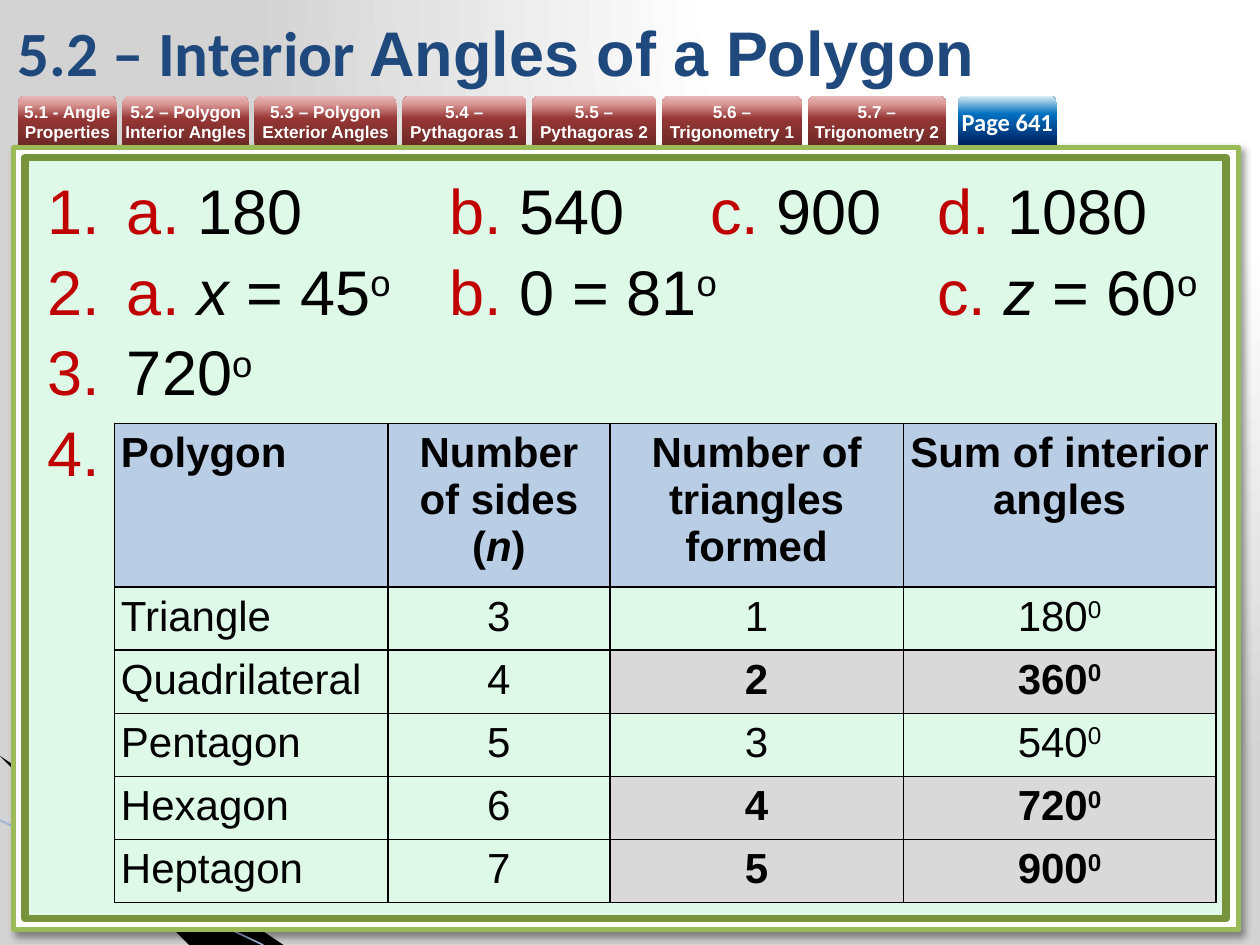
"""Build the answers slide on interior angles of a polygon."""
from lxml import etree
from pptx import Presentation
from pptx.dml.color import RGBColor
from pptx.enum.shapes import MSO_CONNECTOR, MSO_SHAPE
from pptx.enum.text import MSO_ANCHOR, PP_ALIGN
from pptx.oxml import parse_xml
from pptx.oxml.ns import nsdecls, qn
from pptx.util import Inches, Pt

RECT, TAB = MSO_SHAPE.RECTANGLE, MSO_SHAPE.ROUND_2_SAME_RECTANGLE
STRAIGHT = MSO_CONNECTOR.STRAIGHT
MIDDLE, CENTER, LEFT = MSO_ANCHOR.MIDDLE, PP_ALIGN.CENTER, PP_ALIGN.LEFT

COLORS = {
    "title": "1F497D", "text": "000000", "marker": "C00000", "white": "FFFFFF",
    "frame": "9BBB59", "panel": "DFF9E8", "panel_edge": "77933C",
    "header": "B9CDE5", "answer": "D9D9D9", "swoosh": "A7B9DB", "swoosh_line": "9EB3D6",
}
BACKDROP = [(0, "FFFFFF"), (40, "FFFFFF"), (100, "D3D3D3")]
RED = [(0, "6F2927"), (54, "953735"), (83, "D99694"), (100, "E6B9B8")]
BLUE = [(0, "002060"), (63, "0070C0"), (100, "DBEEF4")]

TITLE = [("5.2 – Interior ", "Calibri"), ("Angles of a Polygon", "Arial")]
SECTIONS = [
    ("5.1 - Angle Properties", 0.79), ("5.2 – Polygon Interior Angles", 1.01),
    ("5.3 – Polygon Exterior Angles", 1.13), ("5.4 – Pythagoras 1", 0.99),
    ("5.5 – Pythagoras 2", 0.99), ("5.6 – Trigonometry 1", 1.12),
    ("5.7 – Trigonometry 2", 1.1),
]
PAGE = "Page 641"
TAB_TOP, TAB_HEIGHT, TAB_GAP = 0.76, 0.39, 0.04

ANSWERS = [
    [("a. ", "marker"), ("180\t", ""), ("b. ", "marker"), ("540\t", ""),
     ("c. ", "marker"), ("900\t", ""), ("d.", "marker"), (" 1080", "")],
    [("a. ", "marker"), ("x ", "italic"), ("= 45", ""), ("o\t", "super"),
     ("b. ", "marker"), ("0 = 81", ""), ("o\t", "super"),
     ("c. ", "marker"), ("z ", "italic"), ("= 60", ""), ("o", "super")],
    [("720", ""), ("o", "super")],
    [(" ", "")],
]
TAB_STOPS = [1.44, 3.19, 5.26, 7.06]

HEADERS = [[("Polygon", "")], [("Number of sides (", ""), ("n", "italic"), (")", "")],
           [("Number of triangles formed", "")], [("Sum of interior angles", "")]]
POLYGONS = [("Triangle", 3, False), ("Quadrilateral", 4, True), ("Pentagon", 5, False),
            ("Hexagon", 6, True), ("Heptagon", 7, True)]
COLUMNS = [2.17, 1.76, 2.33, 2.48]
HEADER_HEIGHT, ROW_HEIGHT = 1.3, 0.5

SWOOSHES = [
    ([(0, 6.5), (3.49, 7.5), (2.59, 7.5), (0, 6.49)], "swoosh", 40),
    ([(0, 6.48), (2.56, 7.5), (2.02, 7.5), (0.01, 6.49)], "text", 100),
]


def rgb(name):
    return RGBColor.from_string(COLORS[name])


def box(*inches):
    return [Inches(value) for value in inches]


def gradient(stops, direction):
    marks = "".join(f'<a:gs pos="{pos * 1000}"><a:srgbClr val="{color}"/></a:gs>'
                    for pos, color in stops)
    return parse_xml(f'<a:gradFill {nsdecls("a")} rotWithShape="1">'
                     f'<a:gsLst>{marks}</a:gsLst>{direction}</a:gradFill>')


def set_gradient(fill, parent, stops, direction):
    fill.gradient()
    old = parent.find(qn("a:gradFill"))
    parent.replace(old, gradient(stops, direction))


def style_font(font, size, face="Arial", color="text", bold=False):
    font.size, font.name, font.bold = Pt(size), face, bold
    font.color.rgb = rgb(color)


def add_runs(paragraph, runs):
    for text, style in runs:
        run = paragraph.add_run()
        run.text = text
        if style == "marker":
            run.font.color.rgb = rgb("marker")
        elif style == "italic":
            run.font.italic = True
        elif style == "super":
            run._r.get_or_add_rPr().set("baseline", "30000")


def add_swooshes(slide):
    for points, color, opacity in SWOOSHES:
        builder = slide.shapes.build_freeform(*points[0], scale=Inches(1))
        builder.add_line_segments(points[1:], close=True)
        swoosh = builder.convert_to_shape()
        swoosh.shadow.inherit = False
        swoosh.fill.solid()
        swoosh.fill.fore_color.rgb = rgb(color)
        swoosh.line.fill.background()
        if opacity < 100:
            tint = swoosh._element.spPr.find(".//" + qn("a:srgbClr"))
            etree.SubElement(tint, qn("a:alpha")).set("val", str(opacity * 1000))
    edge = slide.shapes.add_connector(STRAIGHT, *box(0, 6.51, 2.09, 7.5))
    edge.line.color.rgb, edge.line.width = rgb("swoosh_line"), Pt(0.95)
    etree.SubElement(edge._element.spPr, qn("a:effectLst"))


def add_panel(slide, place, fill, edge, width):
    panel = slide.shapes.add_shape(RECT, *box(*place))
    panel.shadow.inherit = False
    panel.fill.solid()
    panel.fill.fore_color.rgb = rgb(fill)
    panel.line.color.rgb, panel.line.width = rgb(edge), Pt(width)
    return panel


def add_drop_shadow(panel):
    effects = panel._element.spPr.find(qn("a:effectLst"))
    effects.append(parse_xml(
        f'<a:outerShdw {nsdecls("a")} blurRad="{Pt(4)}" dist="{Pt(3)}" dir="2700000" '
        'algn="tl" rotWithShape="0"><a:srgbClr val="000000"><a:alpha val="40000"/>'
        '</a:srgbClr></a:outerShdw>'))


def add_tab(slide, label, left, width, stops, size, face):
    tab = slide.shapes.add_shape(TAB, *box(left, TAB_TOP, width, TAB_HEIGHT))
    tab.shadow.inherit = False
    set_gradient(tab.fill, tab._element.spPr, stops, '<a:lin ang="16200000" scaled="0"/>')
    tab.line.fill.background()
    frame = tab.text_frame
    frame.margin_left = frame.margin_right = frame.margin_top = frame.margin_bottom = 0
    frame.word_wrap, frame.vertical_anchor = True, MIDDLE
    frame.text = label
    frame.paragraphs[0].alignment = CENTER
    style_font(frame.paragraphs[0].font, size, face, "white", True)


def add_answers(slide):
    frame = slide.shapes.add_textbox(*box(0.28, 1.31, 9.37, 2.65)).text_frame
    frame.word_wrap = True
    stops = "".join(f'<a:tab pos="{Inches(stop)}" algn="l"/>' for stop in TAB_STOPS)
    numbering = (f'<a:buClr {nsdecls("a")}><a:srgbClr val="{COLORS["marker"]}"/></a:buClr>',
                 f'<a:buFont {nsdecls("a")} typeface="+mj-lt"/>',
                 f'<a:buAutoNum {nsdecls("a")} type="arabicPeriod"/>',
                 f'<a:tabLst {nsdecls("a")}>{stops}</a:tabLst>')
    for index, runs in enumerate(ANSWERS):
        answer = frame.add_paragraph() if index else frame.paragraphs[0]
        answer.space_after = Pt(3)
        properties = answer._p.get_or_add_pPr()
        properties.set("marL", str(Inches(0.63)))
        properties.set("indent", str(-Inches(0.63)))
        for part in numbering:
            properties.append(parse_xml(part))
        style_font(answer.font, 36)
        add_runs(answer, runs)


def fill_cell(cell, runs, align, bold, fill):
    cell.margin_left = cell.margin_right = cell.margin_top = cell.margin_bottom = Inches(0.05)
    paragraph = cell.text_frame.paragraphs[0]
    paragraph.alignment = align
    style_font(paragraph.font, 24, bold=bold)
    add_runs(paragraph, runs)
    properties = cell._tc.get_or_add_tcPr()
    for side in ("lnL", "lnR", "lnT", "lnB"):
        properties.append(parse_xml(
            f'<a:{side} {nsdecls("a")} w="{Pt(1)}"><a:solidFill>'
            f'<a:srgbClr val="{COLORS["text"]}"/></a:solidFill></a:{side}>'))
    if fill:
        cell.fill.solid()
        cell.fill.fore_color.rgb = rgb(fill)
    else:
        cell.fill.background()


def add_polygon_table(slide):
    height = HEADER_HEIGHT + ROW_HEIGHT * len(POLYGONS)
    table = slide.shapes.add_table(len(POLYGONS) + 1, len(COLUMNS),
                                   *box(0.91, 3.36, sum(COLUMNS), height)).table
    for column, width in zip(table.columns, COLUMNS):
        column.width = Inches(width)
    for index, row in enumerate(table.rows):
        row.height = Inches(ROW_HEIGHT if index else HEADER_HEIGHT)
    for index, runs in enumerate(HEADERS):
        fill_cell(table.cell(0, index), runs, CENTER if index else LEFT, True, "header")
    for row, (name, sides, answered) in enumerate(POLYGONS, 1):
        triangles = sides - 2
        values = [[(name, "")], [(str(sides), "")], [(str(triangles), "")],
                  [(str(triangles * 180), ""), ("0", "super")]]
        for index, runs in enumerate(values):
            shaded = answered and index > 1
            fill_cell(table.cell(row, index), runs, CENTER if index else LEFT,
                      shaded, "answer" if shaded else None)


def main():
    deck = Presentation()
    deck.slide_width, deck.slide_height = box(10, 7.5)
    slide = deck.slides.add_slide(deck.slide_layouts[5])
    backdrop = slide.background.fill
    set_gradient(backdrop, slide._element.cSld.find(qn("p:bg")).find(qn("p:bgPr")), BACKDROP,
                 '<a:path path="circle"><a:fillToRect l="65000" b="98000"/></a:path>')
    title = slide.shapes.title
    title.left, title.top, title.width, title.height = box(0.04, 0.05, 8.43, 0.71)
    title.text_frame.vertical_anchor = MIDDLE
    heading = title.text_frame.paragraphs[0]
    heading.alignment = LEFT
    for text, face in TITLE:
        run = heading.add_run()
        run.text = text
        style_font(run.font, 36, face, "title", True)
    add_swooshes(slide)
    add_drop_shadow(add_panel(slide, (0.11, 1.17, 9.72, 6.21), "white", "frame", 3))
    add_panel(slide, (0.2, 1.25, 9.53, 6.04), "panel", "panel_edge", 4.33)
    left = 0.14
    for label, width in SECTIONS:
        add_tab(slide, label, left, width, RED, 9.8, "Arial")
        left += width + TAB_GAP
    add_tab(slide, PAGE, 7.6, 0.79, BLUE, 14, "Calibri")
    add_answers(slide)
    add_polygon_table(slide)
    deck.save("out.pptx")


if __name__ == "__main__":
    main()
